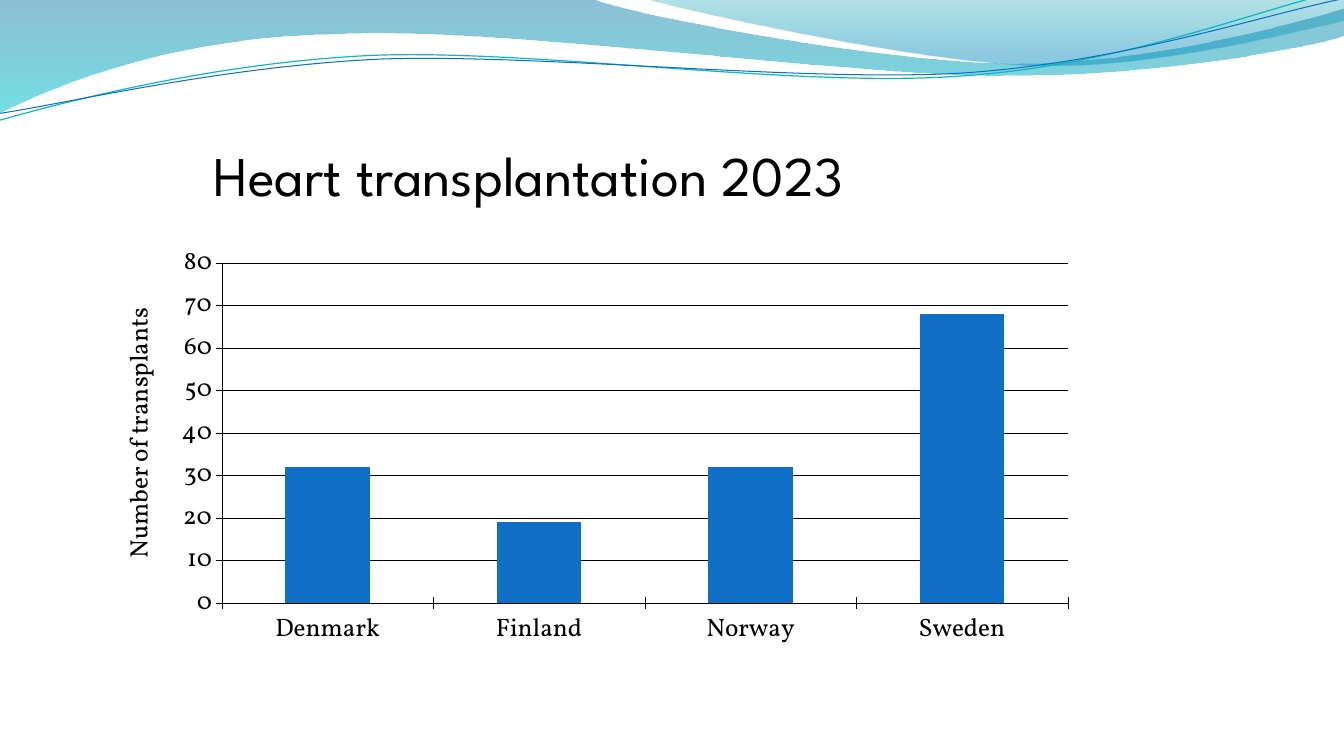
from dataclasses import dataclass

from pptx import Presentation
from pptx.chart.data import CategoryChartData
from pptx.dml.color import RGBColor
from pptx.enum.chart import XL_CHART_TYPE, XL_TICK_MARK
from pptx.enum.text import MSO_ANCHOR, MSO_AUTO_SIZE, PP_ALIGN
from pptx.oxml import parse_xml
from pptx.oxml.ns import nsdecls, qn
from pptx.oxml.xmlchemy import OxmlElement
from pptx.util import Emu, Pt

STACKED = XL_CHART_TYPE.COLUMN_STACKED
CROSS = XL_TICK_MARK.CROSS
TOP = MSO_ANCHOR.TOP
NO_AUTOFIT = MSO_AUTO_SIZE.NONE
LEFT = PP_ALIGN.LEFT

PX = 9144
COLORS = {
    "text": "000000",
    "bar": "0F6FC6",
    "blue_line": "0F6FC6",
    "teal_line": "0AB8BF",
    "deep_blue": "0074A1",
    "aqua": "00C6CF",
    "teal": "00A1A9",
    "sky": "008BBF",
}
TITLE_FONT = "League Spartan"
CHART_FONT = "Vollkorn"
TITLE_BOX = (202, 147, 792, 77)
CHART_BOX = (95, 224, 1025, 447)
PLOT_BOX = (125, 37, 839, 337)
AXIS_TITLE_AT = (20, 77)
TRANSPLANTS = {"Denmark": 32, "Finland": 19, "Norway": 32, "Sweden": 68}

Point = tuple[int, int]


@dataclass
class Stop:
    position: float
    color: str
    opacity: int


@dataclass
class Wave:
    start: Point
    segments: list[tuple[Point, ...]]
    stops: tuple[Stop, ...] = ()
    line: str = ""
    line_width: float = 0
    rotation: float = 0


WAVES = [
    Wave(
        (0, 0),
        [
            ((587, -1),),
            ((634, 17), (884, 63), (1011, 63)),
            ((1137, 63), (1277, 26), (1333, 9)),
            ((1334, 36),),
            ((1311, 44), (1159, 76), (994, 75)),
            ((829, 75), (509, 28), (343, 34)),
            ((172, 36), (61, 83), (-2, 113)),
        ],
        stops=(Stop(0, "deep_blue", 45), Stop(1, "aqua", 55)),
    ),
    Wave(
        (638, -1),
        [
            ((679, 11), (909, 62), (1025, 65)),
            ((1140, 69), (1282, 32), (1333, 21)),
            ((1333, 0),),
        ],
        stops=(Stop(0, "teal", 30), Stop(0.8, "sky", 45)),
    ),
    Wave(
        (-3, 88),
        [
            ((62, 73), (210, 41), (369, 41)),
            ((528, 42), (787, 93), (948, 89)),
            ((1109, 87), (1253, 36), (1333, 22)),
        ],
        line="teal_line",
        line_width=0.85,
        rotation=357.3,
    ),
    Wave(
        (-2, 81),
        [
            ((61, 75), (218, 45), (377, 45)),
            ((537, 47), (795, 88), (954, 86)),
            ((1113, 83), (1256, 42), (1335, 30)),
        ],
        line="blue_line",
        line_width=0.75,
        rotation=357.3,
    ),
]


def rgb(name: str) -> RGBColor:
    return RGBColor.from_string(COLORS[name])


def bend_segments(shape, segments: list[tuple[Point, ...]]) -> None:
    lines = iter(list(shape.element.spPr.iter(qn("a:lnTo"))))
    for segment in segments:
        steps = [next(lines) for _ in segment]
        if len(steps) == 1:
            continue
        curve = OxmlElement("a:cubicBezTo")
        steps[0].addprevious(curve)
        for step in steps:
            curve.append(step[0])
            step.getparent().remove(step)


def draw_wave(slide, wave: Wave) -> None:
    vertices = [point for segment in wave.segments for point in segment]
    builder = slide.shapes.build_freeform(*wave.start, scale=PX)
    builder.add_line_segments(vertices, close=bool(wave.stops))
    shape = builder.convert_to_shape()
    bend_segments(shape, wave.segments)
    shape.rotation = wave.rotation
    shape.shadow.inherit = False
    if wave.line:
        shape.fill.background()
        shape.line.color.rgb = rgb(wave.line)
        shape.line.width = Pt(wave.line_width)
        return
    shape.line.fill.background()
    shape.fill.gradient()
    shape.fill.gradient_angle = 270
    for target, stop in zip(shape.fill.gradient_stops, wave.stops):
        target.position = stop.position
        target.color.rgb = rgb(stop.color)
    color_elements = shape.element.spPr.iter(qn("a:srgbClr"))
    for color_element, stop in zip(color_elements, wave.stops):
        alpha = OxmlElement("a:alpha")
        alpha.set("val", str(stop.opacity * 1000))
        color_element.append(alpha)


def style_font(font, name: str, size: int) -> None:
    font.name = name
    font.size = Pt(size)
    font.bold = False
    font.color.rgb = rgb("text")


def write_title(slide) -> None:
    title = slide.shapes.title
    title.left, title.top, title.width, title.height = (
        Emu(v * PX) for v in TITLE_BOX
    )
    frame = title.text_frame
    frame.text = "Heart transplantation 2023"
    frame.word_wrap = True
    frame.auto_size = NO_AUTOFIT
    frame.vertical_anchor = TOP
    heading = frame.paragraphs[0]
    heading.alignment = LEFT
    heading.line_spacing = 0.8
    style_font(heading.font, TITLE_FONT, 40)


def set_layout(parent, index: int, box: tuple[int, ...], inner: bool) -> None:
    existing = parent.find(qn("c:layout"))
    if existing is not None:
        parent.remove(existing)
    target = '<c:layoutTarget val="inner"/>' if inner else ""
    modes = '<c:xMode val="edge"/><c:yMode val="edge"/>'
    sizes = "".join(
        f'<c:{key} val="{value / CHART_BOX[2 + i % 2]:.4f}"/>'
        for i, (key, value) in enumerate(zip("xywh", box))
    )
    parent.insert(index, parse_xml(
        f'<c:layout {nsdecls("c")}><c:manualLayout>{target}{modes}{sizes}'
        "</c:manualLayout></c:layout>"
    ))


def style_line(line) -> None:
    line.color.rgb = rgb("text")
    line.width = Pt(0.25)


def add_transplant_chart(slide) -> None:
    data = CategoryChartData()
    data.categories = list(TRANSPLANTS)
    data.add_series("Series 1", list(TRANSPLANTS.values()))
    box = (Emu(v * PX) for v in CHART_BOX)
    chart = slide.shapes.add_chart(STACKED, *box, data).chart
    chart.has_title = chart.has_legend = False
    style_font(chart.font, CHART_FONT, 18)
    plot = chart.plots[0]
    plot.gap_width, plot.overlap = 150, 100
    plot.vary_by_categories = False
    bars = plot.series[0].format.fill
    bars.solid()
    bars.fore_color.rgb = rgb("bar")
    for axis in (chart.category_axis, chart.value_axis):
        axis.major_tick_mark = CROSS
        style_font(axis.tick_labels.font, CHART_FONT, 18)
        style_line(axis.format.line)
    counts = chart.value_axis
    counts.minimum_scale, counts.maximum_scale, counts.major_unit = 0, 80, 10
    style_line(counts.major_gridlines.format.line)
    label = counts.axis_title
    label.text_frame.text = "Number of transplants"
    style_font(label.text_frame.paragraphs[0].font, CHART_FONT, 18)
    label_element = label._element
    body = label_element.find(".//" + qn("a:bodyPr"))
    body.set("rot", "-5400000")
    body.set("vert", "horz")
    set_layout(label_element, 1, AXIS_TITLE_AT, inner=False)
    set_layout(plot._element.getparent(), 0, PLOT_BOX, inner=True)


def main() -> None:
    deck = Presentation()
    deck.slide_width, deck.slide_height = Emu(1333 * PX), Emu(750 * PX)
    slide = deck.slides.add_slide(deck.slide_layouts[5])
    for wave in WAVES:
        draw_wave(slide, wave)
    write_title(slide)
    add_transplant_chart(slide)
    deck.save("out.pptx")


if __name__ == "__main__":
    main()
